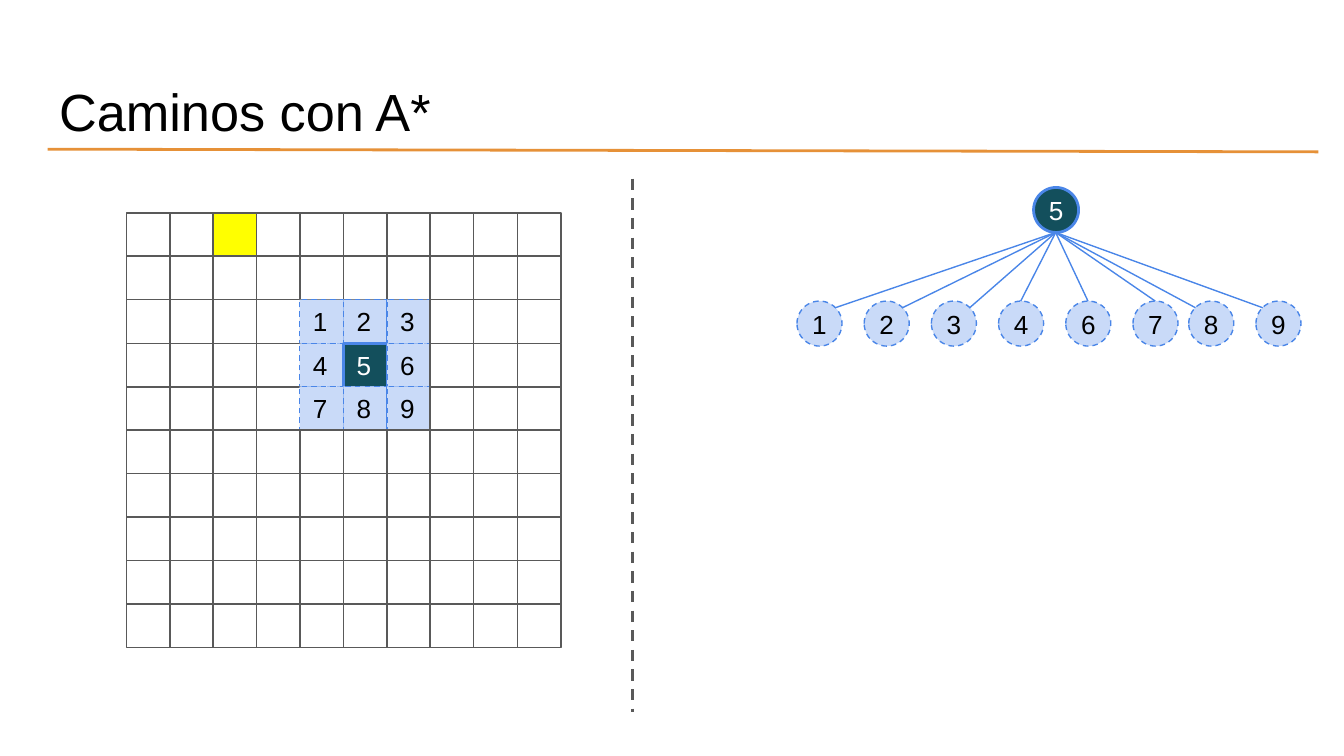
from dataclasses import dataclass

from lxml.etree import SubElement
from pptx import Presentation
from pptx.dml.color import RGBColor
from pptx.enum.dml import MSO_LINE
from pptx.enum.shapes import MSO_CONNECTOR, MSO_SHAPE
from pptx.enum.text import MSO_ANCHOR, MSO_AUTO_SIZE, PP_ALIGN
from pptx.oxml.ns import qn
from pptx.util import Pt

EMU_PER_PX = 4572


@dataclass(frozen=True)
class Theme:
    font: str = "Arial"
    title_size: int = 28
    label_size: int = 14
    thin: float = 0.75
    thick: float = 1.5
    black: str = "000000"
    white: str = "FFFFFF"
    gray: str = "595959"
    orange: str = "E69138"
    yellow: str = "FFFF00"
    teal: str = "134F5C"
    blue: str = "4A86E8"
    pale_blue: str = "C9DAF8"


THEME = Theme()

EMPTY = {"fill": None, "line": THEME.gray, "width": THEME.thin}
GOAL = {**EMPTY, "fill": THEME.yellow}
NEIGHBOR = {"fill": THEME.pale_blue, "line": THEME.blue, "width": THEME.thin,
            "dash": MSO_LINE.DASH, "color": THEME.black}
CURRENT = {"fill": THEME.teal, "line": THEME.blue, "width": THEME.thick,
           "color": THEME.white}

MARGIN = 20
GRID_LEFT, GRID_TOP, GRID_SIDE, GRID_COUNT, CELL = 188, 317, 647, 10, 65
GOAL_CELL = (0, 2)
BLOCK_ROW, BLOCK_COLUMN, BLOCK_SIDE = 2, 4, 3
CENTER = 5

NODE = 67
ROOT_LEFT, ROOT_TOP = 1538, 279
CHILD_TOP, CHILD_STEP = 448, 100
CORNER = 10
CHILD_GROUPS = (
    (1186, (1, 2, 3), NODE - CORNER, CORNER),
    (1486, (4, 6, 7), NODE // 2, 0),
    (1769, (8, 9), CORNER, CORNER),
)


def px(value):
    return value * EMU_PER_PX


def assign(target, values):
    for name, value in values.items():
        setattr(target, name, value)


def style_line(line, color, width, dash=None):
    line.color.rgb = RGBColor.from_string(color)
    line.width = Pt(width)
    if dash:
        line.dash_style = dash


def style_font(font, size, color):
    assign(font, {"name": THEME.font, "size": Pt(size), "bold": False})
    font.color.rgb = RGBColor.from_string(color)


def write_text(shape, text, size, color, align, anchor, margin):
    frame = shape.text_frame
    assign(frame, {
        "text": text, "word_wrap": True, "auto_size": MSO_AUTO_SIZE.NONE,
        "vertical_anchor": anchor,
        **{f"margin_{side}": px(margin)
           for side in ("left", "top", "right", "bottom")},
    })
    paragraph = frame.paragraphs[0]
    paragraph.alignment = align
    style_font(paragraph.runs[0].font, size, color)


def set_title(slide, text):
    title = slide.shapes.title
    assign(title, {"left": px(68), "top": px(98),
                   "width": px(1864), "height": px(126)})
    write_text(title, text, THEME.title_size, THEME.black,
               PP_ALIGN.LEFT, MSO_ANCHOR.TOP, MARGIN)


def add_line(slide, start, end, color, width, dash=None):
    connector = slide.shapes.add_connector(
        MSO_CONNECTOR.STRAIGHT, *map(px, start + end))
    style_line(connector.line, color, width, dash)
    SubElement(connector.element.spPr, qn("a:effectLst"))


def add_box(slide, kind, left, top, side, style):
    shape = slide.shapes.add_shape(kind, *map(px, (left, top, side, side)))
    shape.shadow.inherit = False
    if style["fill"]:
        shape.fill.solid()
        shape.fill.fore_color.rgb = RGBColor.from_string(style["fill"])
    else:
        shape.fill.background()
    style_line(shape.line, style["line"], style["width"], style.get("dash"))
    return shape


def add_cell(slide, row, column):
    block_row, block_column = row - BLOCK_ROW, column - BLOCK_COLUMN
    label, style = None, EMPTY
    if block_row in range(BLOCK_SIDE) and block_column in range(BLOCK_SIDE):
        label = block_row * BLOCK_SIDE + block_column + 1
        style = CURRENT if label == CENTER else NEIGHBOR
    elif (row, column) == GOAL_CELL:
        style = GOAL
    left = GRID_LEFT + column * GRID_SIDE // GRID_COUNT
    top = GRID_TOP + row * GRID_SIDE // GRID_COUNT
    cell = add_box(slide, MSO_SHAPE.RECTANGLE, left, top, CELL, style)
    if label:
        write_text(cell, str(label), THEME.label_size, style["color"],
                   PP_ALIGN.LEFT, MSO_ANCHOR.MIDDLE, MARGIN)


def add_grid(slide):
    for row in range(GRID_COUNT):
        for column in range(GRID_COUNT):
            add_cell(slide, row, column)


def add_node(slide, left, top, label, style):
    node = add_box(slide, MSO_SHAPE.OVAL, left, top, NODE, style)
    write_text(node, str(label), THEME.label_size, style["color"],
               PP_ALIGN.CENTER, MSO_ANCHOR.MIDDLE, 0)


def add_tree(slide):
    root_bottom = (ROOT_LEFT + NODE // 2, ROOT_TOP + NODE)
    add_node(slide, ROOT_LEFT, ROOT_TOP, CENTER, CURRENT)
    for group_left, labels, joint_x, joint_y in CHILD_GROUPS:
        for index, label in enumerate(labels):
            left = group_left + index * CHILD_STEP
            add_node(slide, left, CHILD_TOP, label, NEIGHBOR)
            add_line(slide, root_bottom, (left + joint_x, CHILD_TOP + joint_y),
                     THEME.blue, THEME.thin)


def main():
    presentation = Presentation()
    assign(presentation, {"slide_width": px(2000), "slide_height": px(1125)})
    slide = presentation.slides.add_slide(
        presentation.slide_layouts.get_by_name("Title Only"))
    add_line(slide, (71, 222), (1962, 226), THEME.orange, THEME.thick)
    set_title(slide, "Caminos con A*")
    add_grid(slide)
    add_tree(slide)
    add_line(slide, (941, 266), (941, 1060), THEME.gray, THEME.thick, MSO_LINE.DASH)
    presentation.save("out.pptx")


if __name__ == "__main__":
    main()
